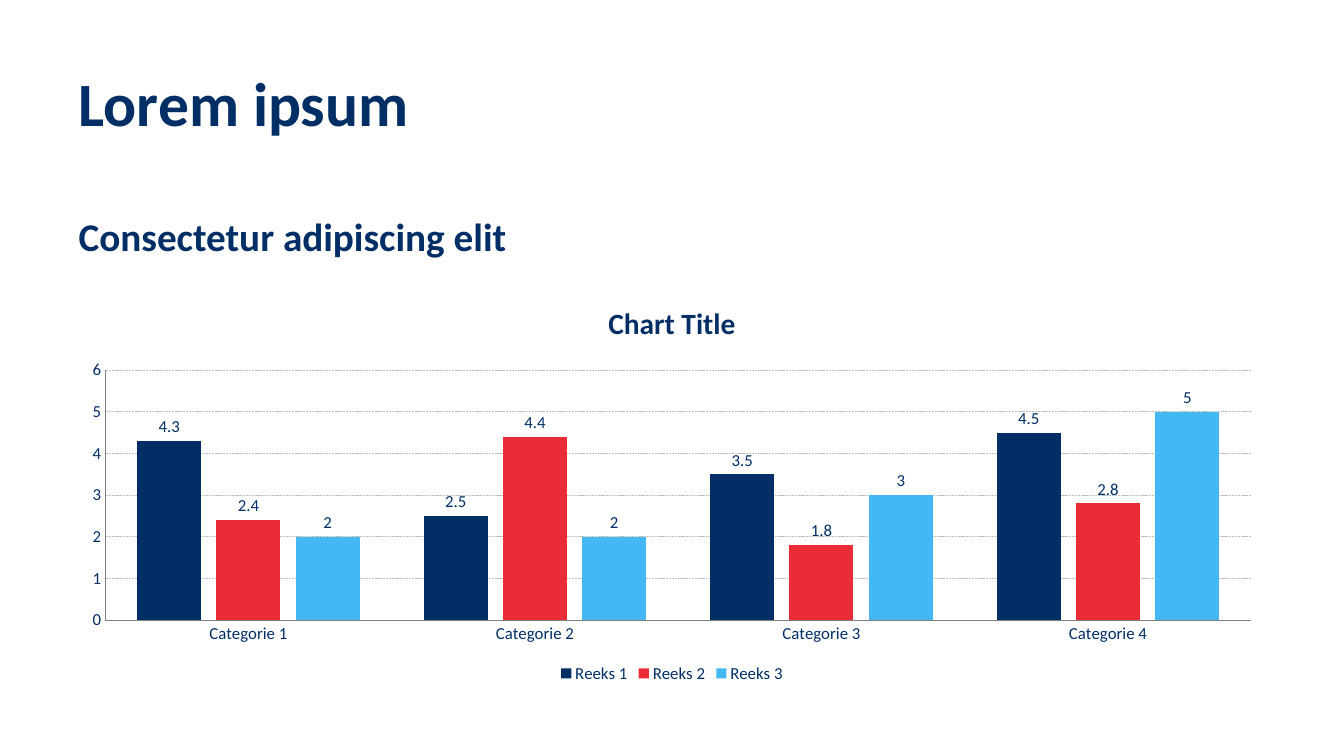
from pptx import Presentation
from pptx.chart.data import CategoryChartData as Data
from pptx.dml.color import RGBColor as RGB
from pptx.enum.chart import (XL_CHART_TYPE as KIND, XL_LABEL_POSITION as SPOT,
                             XL_LEGEND_POSITION as SIDE, XL_TICK_MARK as TICK)
from pptx.enum.dml import MSO_LINE_DASH_STYLE as DASH
from pptx.enum.text import MSO_ANCHOR as ANCHOR, MSO_AUTO_SIZE as FIT, PP_ALIGN as ALIGN
from pptx.oxml.ns import qn
from pptx.util import Inches, Pt

NAVY = RGB(0x00, 0x2E, 0x65)
RED = RGB(0xEA, 0x2C, 0x38)
SKY = RGB(0x44, 0xB8, 0xF3)
GREY = RGB(0x80, 0x80, 0x80)
PALE = RGB(0xBF, 0xBF, 0xBF)
FACE = "Calibri"
WIDE, HIGH = Inches(13.33), Inches(7.5)
LEFT = Inches(0.68)
ROW = HIGH / 100

CATS = [f"Categorie {n}" for n in range(1, 5)]
ROWS = [
    ("Reeks 1", (4.3, 2.5, 3.5, 4.5), NAVY),
    ("Reeks 2", (2.4, 4.4, 1.8, 2.8), RED),
    ("Reeks 3", (2, 2, 3, 5), SKY),
]


def band(top, rows):
    """Box between the side margins; top and height in hundredths of the slide."""
    return LEFT, int(top * ROW), WIDE - 2 * LEFT, int(rows * ROW)


def style(font, size, bold=False):
    font.name, font.size, font.bold = FACE, Pt(size), bold
    font.color.rgb = NAVY


def stroke(line, color):
    line.color.rgb, line.width = color, Pt(0.5)


def head(shape, box, text, size):
    """Place a heading in a placeholder, without a bullet."""
    shape.left, shape.top, shape.width, shape.height = box
    frame = shape.text_frame
    frame.word_wrap, frame.auto_size = True, FIT.NONE
    frame.vertical_anchor = ANCHOR.TOP
    para = frame.paragraphs[0]
    props = para._p.get_or_add_pPr()
    props.set("marL", "0")
    props.set("indent", "0")
    props.append(props.makeelement(qn("a:buNone"), {}))
    para.alignment, para.line_spacing = ALIGN.LEFT, 0.9
    para.space_before = Pt(0)
    run = para.add_run()
    run.text = text
    style(run.font, size, True)


def bars(slide, box):
    data = Data()
    data.categories = CATS
    for name, vals, _ in ROWS:
        data.add_series(name, vals)
    chart = slide.shapes.add_chart(KIND.COLUMN_CLUSTERED, *box, data).chart
    style(chart.font, 10)
    chart.has_title = True
    run = chart.chart_title.text_frame.paragraphs[0].add_run()
    run.text = "Chart Title"
    style(run.font, 21, True)
    chart.has_legend = True
    chart.legend.position = SIDE.BOTTOM
    chart.legend.include_in_layout = False
    style(chart.legend.font, 12)

    for axis in (chart.category_axis, chart.value_axis):
        axis.major_tick_mark = axis.minor_tick_mark = TICK.NONE
        style(axis.tick_labels.font, 12)
        stroke(axis.format.line, GREY)
    grid = chart.value_axis.major_gridlines.format.line
    stroke(grid, PALE)
    grid.dash_style = DASH.SQUARE_DOT

    plot = chart.plots[0]
    plot.gap_width, plot.overlap = 100, -24
    plot.vary_by_categories = False
    for item, (_, _, color) in zip(plot.series, ROWS):
        item.format.fill.solid()
        item.format.fill.fore_color.rgb = color
        tags = item.data_labels
        tags.show_value, tags.position = True, SPOT.OUTSIDE_END
        style(tags.font, 12)


def main():
    deck = Presentation()
    deck.slide_width, deck.slide_height = WIDE, HIGH
    slide = deck.slides.add_slide(deck.slide_layouts[1])
    head(slide.shapes.title, band(9.07, 15.6), "Lorem ipsum", 44)
    head(slide.placeholders[1], band(28.13, 9.47), "Consectetur adipiscing elit", 28)
    bars(slide, band(37.6, 53.33))
    deck.save("out.pptx")


if __name__ == "__main__":
    main()
